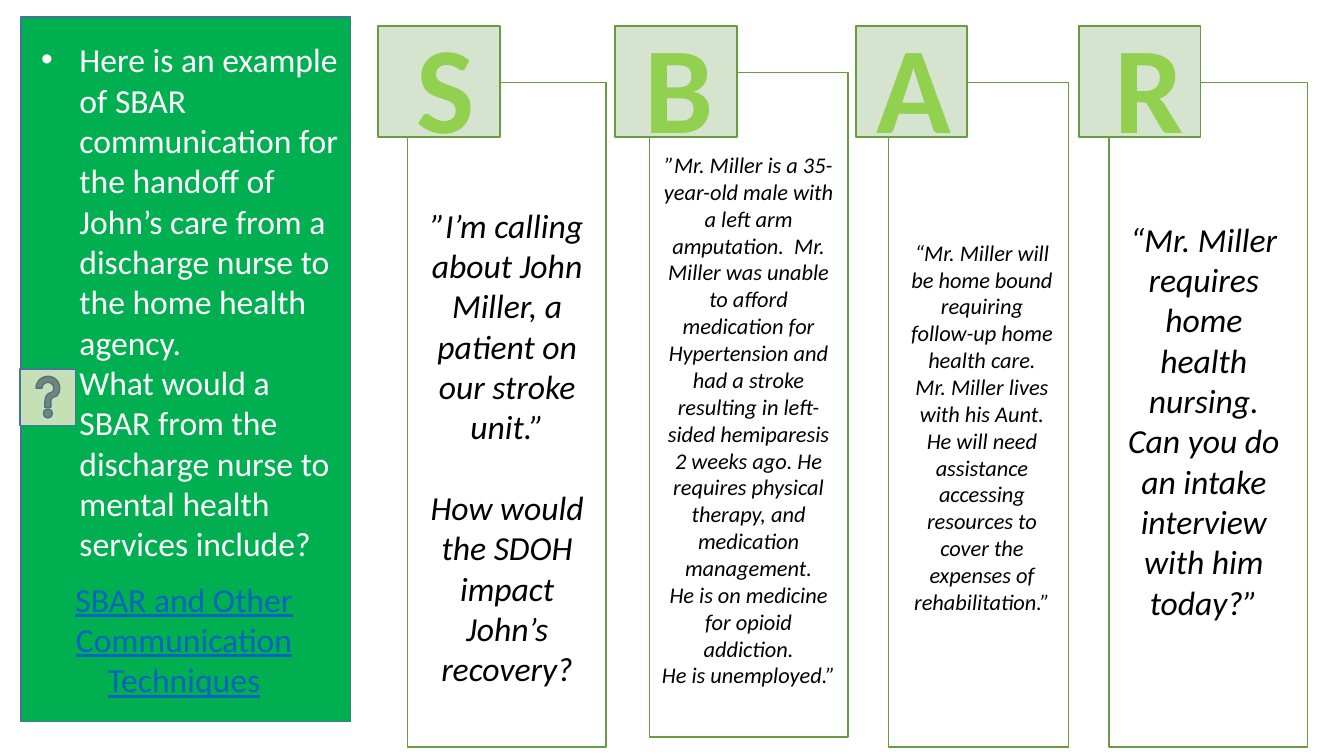
from pptx import Presentation
from pptx import util as u
from pptx.dml.color import RGBColor
from pptx.enum import shapes, text
from pptx.oxml.ns import qn
from lxml import etree

PX = 9144  # EMU per px, 100 px to the inch
COLORS = {
    "white": "FFFFFF", "black": "000000", "green": "00B050", "lime": "92D050",
    "badge": "D5E3CF", "button": "C5E0B4", "border": "669D40",
    "blue": "43739E", "link": "0563C1",
}


class SlideBuilder:
    font = "Calibri"

    def __init__(self, presentation):
        self.slide = presentation.slides.add_slide(presentation.slide_layouts[6])

    def color(self, name):
        return RGBColor.from_string(COLORS[name])

    def box(self, bounds, fill, line, kind=shapes.MSO_SHAPE.RECTANGLE):
        shape = self.slide.shapes.add_shape(kind, *[value * PX for value in bounds])
        shape.shadow.inherit = False
        shape.fill.solid()
        shape.fill.fore_color.rgb = self.color(fill)
        shape.line.color.rgb = self.color(line)
        shape.line.width = u.Pt(1)

    def text(self, bounds, paragraphs, size, color, gap=0, wrap=True, bullets=False,
             bold=False, italic=False, underline=False):
        shape = self.slide.shapes.add_textbox(*[value * PX for value in bounds])
        frame = shape.text_frame
        frame.word_wrap = wrap
        frame.text = "\n".join(paragraphs)
        for index, paragraph in enumerate(frame.paragraphs):
            if bullets:
                self.bullet(paragraph)
            else:
                paragraph.alignment = text.PP_ALIGN.CENTER
            if index and gap:
                paragraph.space_before = u.Pt(gap)
            for run in paragraph.runs:
                font = run.font
                font.name, font.size = self.font, u.Pt(size)
                font.bold, font.italic, font.underline = bold, italic, underline
                font.color.rgb = self.color(color)
        return frame

    def bullet(self, paragraph):
        properties = paragraph._p.get_or_add_pPr()
        properties.set("marL", str(38 * PX))
        properties.set("indent", str(-38 * PX))
        etree.SubElement(properties, qn("a:buFont")).set("typeface", "Arial")
        etree.SubElement(properties, qn("a:buChar")).set("char", "•")

    def letter(self, bounds, letter):
        frame = self.text(bounds, [letter], 88, "lime", wrap=False, bold=True)
        properties = frame.paragraphs[0].runs[0].font._element
        outline = etree.Element(qn("a:ln"), w=str(u.Pt(1.75)))
        fill = etree.SubElement(outline, qn("a:solidFill"))
        etree.SubElement(fill, qn("a:srgbClr")).set("val", COLORS["green"])
        properties.insert(0, outline)


# Per column: letter, panel (left, top, width), badge (left, width),
# letter (left, width), text bounds, text size, gap in points, paragraphs
COLUMNS = [
    ("S", (404, 82, 197), (375, 121), (402, 79), (411, 198, 184, 495), 24, 29, [
        "”I’m calling about John Miller, a patient on our stroke unit.”",
        "How would the SDOH impact John’s recovery?"]),
    ("B", (644, 72, 197), (610, 121), (629, 89), (646, 145, 193, 549), 16, 0, [
        "”Mr. Miller is a 35-year-old male with a left arm amputation.  Mr. Miller "
        "was unable to afford medication for Hypertension and had a stroke resulting "
        "in left-sided hemiparesis 2 weeks ago. He requires physical therapy, and "
        "medication management.",
        "He is on medicine for opioid addiction.",
        "He is unemployed.”"]),
    ("A", (881, 82, 179), (849, 110), (859, 95), (891, 232, 166, 387), 16, 0, [
        "“Mr. Miller will be home bound requiring follow-up home health care.",
        "Mr. Miller lives with his Aunt.",
        "He will need assistance accessing resources to cover the expenses of "
        "rehabilitation.”"]),
    ("R", (1100, 82, 197), (1070, 121), (1095, 90), (1106, 212, 176, 414), 24, 0, [
        "“Mr. Miller requires home health nursing. Can you do an intake interview "
        "with him today?”"]),
]
INTRO = [
    "Here is an example of SBAR communication for the handoff of John’s care from a "
    "discharge nurse to the home health agency.",
    "What would a SBAR from the discharge nurse to mental health services include?",
]


def main():
    presentation = Presentation()
    presentation.slide_width, presentation.slide_height = 1333 * PX, 750 * PX
    builder = SlideBuilder(presentation)

    # Green side panel
    builder.box((21, 17, 327, 699), "green", "blue")
    builder.text((31, 34, 316, 535), INTRO, 24, "white", bullets=True)
    builder.text((52, 569, 261, 162), ["SBAR and Other Communication Techniques"],
                 24, "link", underline=True)

    # SBAR columns
    for letter, panel, badge, glyph, bounds, size, gap, paragraphs in COLUMNS:
        builder.box((*panel, 659), "white", "border")
        builder.box((badge[0], 26, badge[1], 110), "badge", "border")
        builder.letter((glyph[0], 5, glyph[1], 158), letter)
        builder.text(bounds, paragraphs, size, "black", gap=gap, italic=True)

    # Help button over the second bullet
    builder.box((20, 366, 55, 56), "button", "blue",
                shapes.MSO_SHAPE.ACTION_BUTTON_HELP)

    presentation.save("out.pptx")


if __name__ == "__main__":
    main()
